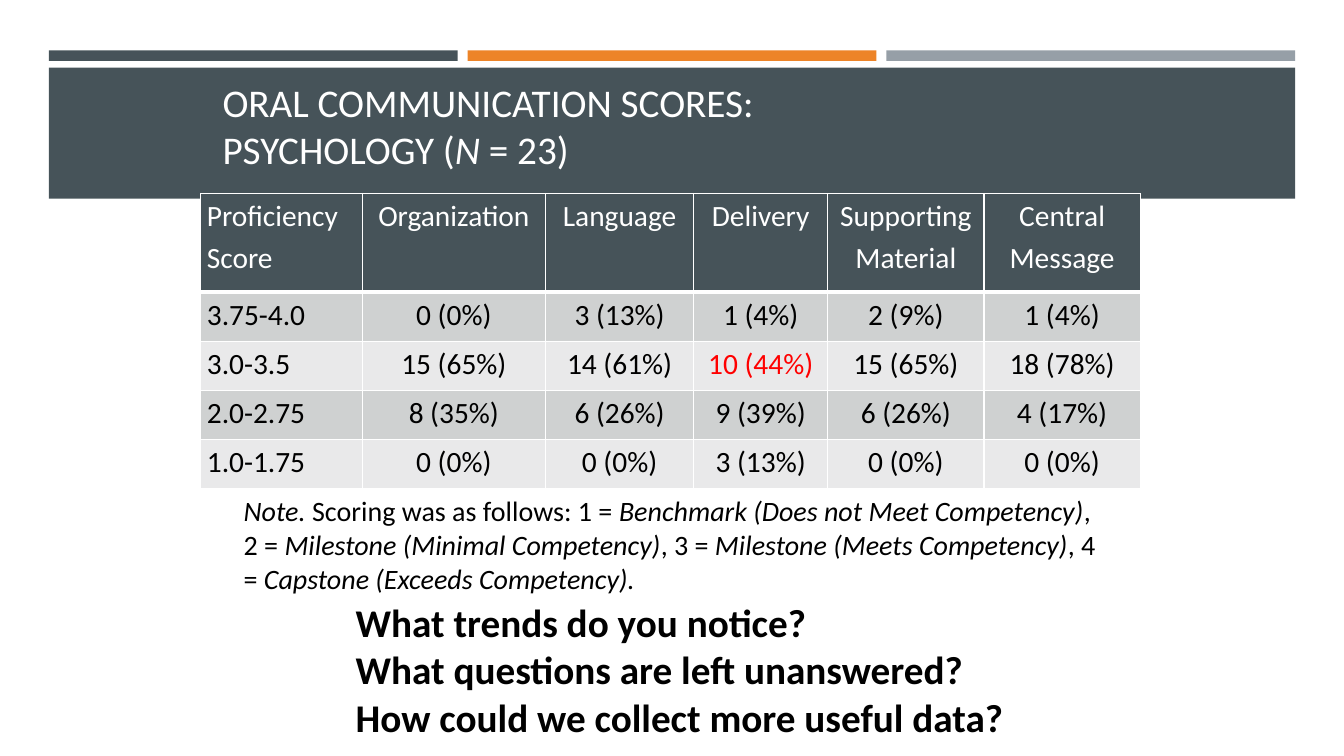
from lxml.etree import SubElement
from pptx import Presentation
from pptx.dml.color import RGBColor
from pptx.enum.shapes import MSO_SHAPE
from pptx.enum.text import MSO_ANCHOR, PP_ALIGN
from pptx.oxml.ns import qn
from pptx.util import Pt

COLORS = {
    "slate": "465359",
    "orange": "ED8428",
    "gray": "969FA7",
    "white": "FFFFFF",
    "black": "000000",
    "red": "FF0000",
    "dark_band": "CFD1D1",
    "light_band": "E9E9EA",
}
FONT = "Calibri"

TITLE_LINES = [
    [("ORAL COMMUNICATION SCORES: ", False)],
    [("PSYCHOLOGY (", False), ("N", True), (" = 23)", False)],
]
SCORES = [
    ["Proficiency Score", "Organization", "Language", "Delivery",
     "Supporting Material", "Central Message"],
    ["3.75-4.0", "0 (0%)", "3 (13%)", "1 (4%)", "2 (9%)", "1 (4%)"],
    ["3.0-3.5", "15 (65%)", "14 (61%)", "10 (44%)", "15 (65%)", "18 (78%)"],
    ["2.0-2.75", "8 (35%)", "6 (26%)", "9 (39%)", "6 (26%)", "4 (17%)"],
    ["1.0-1.75", "0 (0%)", "0 (0%)", "3 (13%)", "0 (0%)", "0 (0%)"],
]
COLUMN_WIDTHS = [115.2, 131, 105.8, 95.8, 111.6, 111.6]
HIGHLIGHTED_CELL = (2, 3)
NOTE = [
    ("Note. ", True),
    ("Scoring was as follows: 1 = ", False),
    ("Benchmark (Does not Meet Competency)", True),
    (", 2 = ", False),
    ("Milestone (Minimal Competency)", True),
    (", 3 = ", False),
    ("Milestone (Meets Competency)", True),
    (", 4 =", False),
    (" Capstone (Exceeds Competency).", True),
]
QUESTIONS = [
    "What trends do you notice?",
    "What questions are left unanswered?",
    "How could we collect more useful data?",
]


def color(name):
    return RGBColor.from_string(COLORS[name])


def add_span(para, text, color_name, **formats):
    span = para.add_run()
    span.text = text
    span.font.color.rgb = color(color_name)
    for name, value in {"name": FONT, **formats}.items():
        setattr(span.font, name, value)


def add_rectangle(page, box, fill):
    shape = page.shapes.add_shape(MSO_SHAPE.RECTANGLE, *map(Pt, box))
    shape.shadow.inherit = False
    shape.fill.solid()
    shape.fill.fore_color.rgb = color(fill)
    shape.line.fill.background()
    return shape


def add_text_box(page, box, anchor=MSO_ANCHOR.TOP):
    frame = page.shapes.add_textbox(*map(Pt, box)).text_frame
    frame.word_wrap = True
    frame.vertical_anchor = anchor
    return frame


def add_banner(page, box):
    """Three accent bars above the slate band that holds the title."""
    left, top, width, height = box
    gap, bar_height, band_offset = 7.2, 7.5, 12.4
    bar_width = (width - 2 * gap) / 3
    for index, fill in enumerate(["slate", "orange", "gray"]):
        bar_left = left + index * (bar_width + gap)
        add_rectangle(page, (bar_left, top, bar_width, bar_height), fill)
    add_rectangle(page, (left, top + band_offset, width, height - band_offset), "slate")

    title_box = (left + 117, top + 13.7, 587.5, 77)
    para = add_text_box(page, title_box, MSO_ANCHOR.BOTTOM).paragraphs[0]
    for index, line in enumerate(TITLE_LINES):
        if index:
            para.add_line_break()
        for text, italic in line:
            add_span(para, text, "white", size=Pt(28), italic=italic)


def set_borders(cell, bottom_width):
    properties = cell._tc.get_or_add_tcPr()
    widths = {"lnL": 1, "lnR": 1, "lnT": 1, "lnB": bottom_width}
    for side, width in widths.items():
        line = SubElement(properties, qn(f"a:{side}"), w=str(Pt(width)))
        fill = SubElement(line, qn("a:solidFill"))
        SubElement(fill, qn("a:srgbClr"), val=COLORS["white"])


def add_score_table(page, box):
    left, top, width, height = box
    row_height = height / (len(SCORES) + 1)
    table = page.shapes.add_table(
        len(SCORES), len(COLUMN_WIDTHS), *map(Pt, box)).table
    for column, column_width in zip(table.columns, COLUMN_WIDTHS):
        column.width = Pt(column_width)
    margins = {"margin_left": Pt(4.3), "margin_right": Pt(4.3),
               "margin_top": 0, "margin_bottom": 0}
    for row_index, row in enumerate(SCORES):
        header = row_index == 0
        table.rows[row_index].height = Pt(row_height * (2 if header else 1))
        band = "dark_band" if row_index % 2 else "light_band"
        for column_index, text in enumerate(row):
            cell = table.cell(row_index, column_index)
            for name, value in margins.items():
                setattr(cell, name, value)
            set_borders(cell, 3 if header else 1)
            cell.fill.solid()
            cell.fill.fore_color.rgb = color("slate" if header else band)
            para = cell.text_frame.paragraphs[0]
            para.line_spacing = 1.15
            para.alignment = PP_ALIGN.CENTER if column_index else PP_ALIGN.LEFT
            text_color = "white" if header else "black"
            if (row_index, column_index) == HIGHLIGHTED_CELL:
                text_color = "red"
            add_span(para, text, text_color, size=Pt(21), bold=False)


def add_note(page, box):
    para = add_text_box(page, box).paragraphs[0]
    for text, italic in NOTE:
        add_span(para, text, "black", size=Pt(20), italic=italic)


def add_questions(page, box):
    frame = add_rectangle(page, box, "white").text_frame
    frame.word_wrap = True
    frame.vertical_anchor = MSO_ANCHOR.TOP
    for index, question in enumerate(QUESTIONS):
        para = frame.add_paragraph() if index else frame.paragraphs[0]
        para.alignment = PP_ALIGN.LEFT
        add_span(para, question, "black", size=Pt(28), bold=True)


def main():
    deck = Presentation()
    deck.slide_width, deck.slide_height = Pt(960), Pt(540)
    page = deck.slides.add_slide(deck.slide_layouts[6])
    add_banner(page, (34.9, 36, 890.3, 106))
    add_score_table(page, (143.5, 138.2, sum(COLUMN_WIDTHS), 211))
    add_note(page, (167, 349.2, 631.4, 101.5))
    add_questions(page, (247, 424.1, 492.5, 108.7))
    deck.save("out.pptx")


if __name__ == "__main__":
    main()
